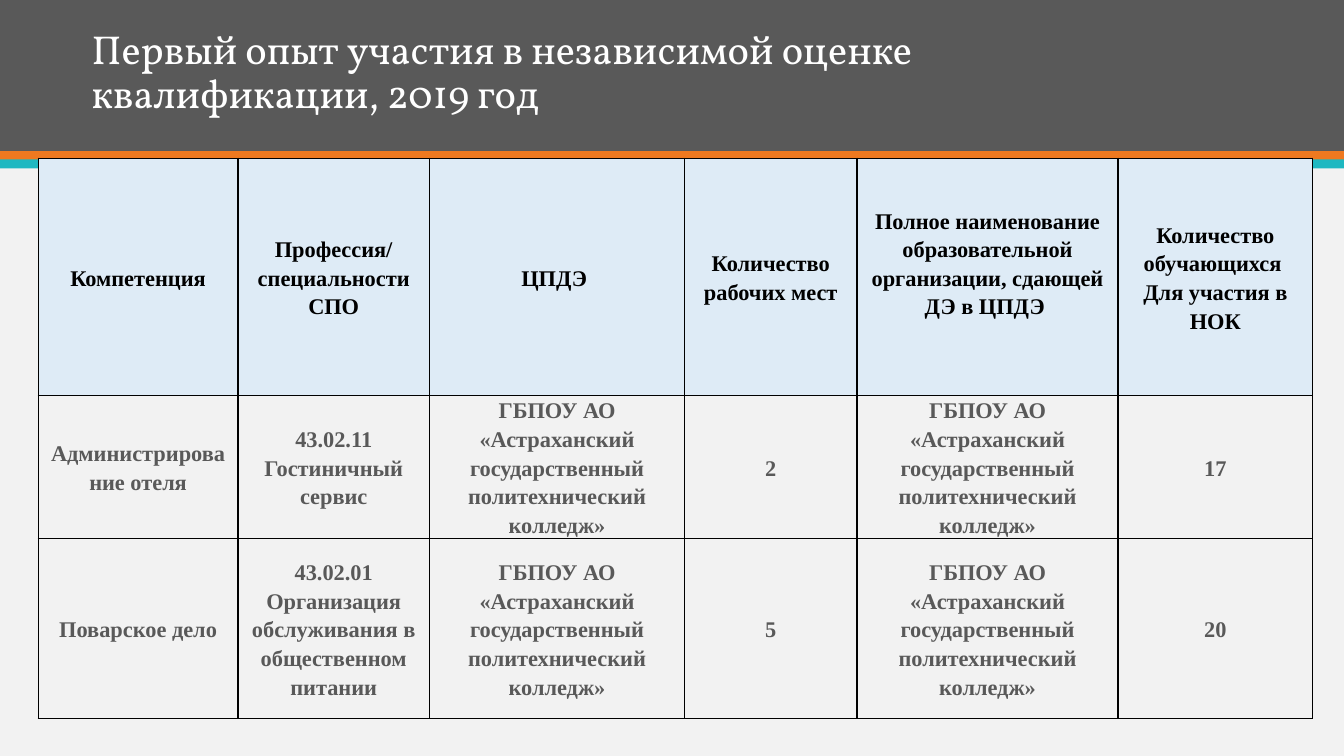
from lxml import etree
from pptx import Presentation
from pptx.dml.color import RGBColor
from pptx.enum.shapes import MSO_SHAPE
from pptx.enum.text import MSO_ANCHOR, MSO_AUTO_SIZE, PP_ALIGN
from pptx.oxml.ns import qn
from pptx.util import Inches, Pt

RECTANGLE = MSO_SHAPE.RECTANGLE
MIDDLE, BOTTOM = MSO_ANCHOR.MIDDLE, MSO_ANCHOR.BOTTOM
LEFT, CENTER = PP_ALIGN.LEFT, PP_ALIGN.CENTER
NO_AUTOFIT = MSO_AUTO_SIZE.NONE

COLORS = {"page": "F2F2F2", "banner": "595959", "orange": "EF7920",
          "teal": "1EB8C1", "header": "DEEBF6", "body": "595959",
          "black": "000000", "white": "FFFFFF"}
TITLE = "Первый опыт участия в независимой оценке квалификации, 2019 год"
COLLEGE = "ГБПОУ АО «Астраханский государственный политехнический колледж»"
# A line break inside a cell starts a new paragraph
ROWS = [
    ["Компетенция", "Профессия/ специальности СПО", "ЦПДЭ ",
     "Количество рабочих мест",
     "Полное наименование образовательной организации, сдающей ДЭ в ЦПДЭ ",
     "Количество обучающихся \nДля участия в НОК"],
    ["Администрирование отеля", "43.02.11 Гостиничный сервис", COLLEGE,
     "2", COLLEGE, "17"],
    ["Поварское дело",
     "43.02.01 Организация обслуживания в общественном питании", COLLEGE,
     "5", COLLEGE, "20"],
]
BANDS = [("banner", 0, 1.5), ("orange", 1.5, 0.09), ("teal", 1.58, 0.09)]
COLUMN_WIDTHS = [1.98, 1.9, 2.53, 1.71, 2.59, 1.93]
ROW_HEIGHTS = [2.35, 1.42, 1.79]
TABLE_LEFT, TABLE_TOP = 0.38, 1.57
ORGANISATION_COLUMN = 4
ORGANISATION_LIFT = 0.28  # raises the long heading by half a line


def rgb(name):
    return RGBColor.from_string(COLORS[name])


def add_text(paragraph, text, font, size, color, align, spacing):
    paragraph.alignment = align
    paragraph.line_spacing = spacing
    run = paragraph.add_run()
    run.text = text
    run.font.name = font
    run.font.size = Pt(size)
    run.font.color.rgb = rgb(color)
    return run


def add_borders(cell):
    """Draw the four cell edges; they must come before the fill."""
    properties = cell._tc.get_or_add_tcPr()
    for position, edge in enumerate(("lnL", "lnR", "lnT", "lnB")):
        line = etree.Element(qn(f"a:{edge}"), w=str(Pt(1)))
        fill = etree.SubElement(line, qn("a:solidFill"))
        etree.SubElement(fill, qn("a:srgbClr"), val=COLORS["black"])
        properties.insert(position, line)


def fill_cell(cell, text, is_header):
    cell.vertical_anchor = MIDDLE
    cell.margin_left = cell.margin_right = Inches(0.07)
    cell.margin_top = cell.margin_bottom = 0
    if is_header:
        cell.fill.solid()
        cell.fill.fore_color.rgb = rgb("header")
    else:
        cell.fill.background()
    add_borders(cell)
    frame = cell.text_frame
    for index, line in enumerate(text.split("\n")):
        paragraph = frame.add_paragraph() if index else frame.paragraphs[0]
        run = add_text(paragraph, line, "Times New Roman", 16,
                       "black" if is_header else "body", CENTER, 1.15)
        run.font.bold = True


def add_bands(slide, width):
    for color, top, height in BANDS:
        band = slide.shapes.add_shape(RECTANGLE, 0, Inches(top), width,
                                      Inches(height))
        band.shadow.inherit = False
        band.fill.solid()
        band.fill.fore_color.rgb = rgb(color)
        band.line.fill.background()


def place_title(slide):
    title = slide.shapes.title
    title.left, title.top = Inches(0.81), Inches(0.52)
    title.width, title.height = Inches(10.5), Inches(1.13)
    frame = title.text_frame
    frame.word_wrap = True
    frame.auto_size = NO_AUTOFIT
    frame.vertical_anchor = BOTTOM
    frame.margin_bottom = Inches(0.49)
    add_text(frame.paragraphs[0], TITLE, "Vollkorn", 28.8, "white", LEFT, 0.9)
    slide.shapes._spTree.append(title._element)  # in front of the bands


def add_assessment_table(slide):
    table = slide.shapes.add_table(
        len(ROWS), len(COLUMN_WIDTHS), Inches(TABLE_LEFT), Inches(TABLE_TOP),
        Inches(sum(COLUMN_WIDTHS)), Inches(sum(ROW_HEIGHTS))).table
    table.first_row = table.horz_banding = False
    for column, width in zip(table.columns, COLUMN_WIDTHS):
        column.width = Inches(width)
    for row, height in zip(table.rows, ROW_HEIGHTS):
        row.height = Inches(height)
    for r, texts in enumerate(ROWS):
        for c, text in enumerate(texts):
            fill_cell(table.cell(r, c), text, is_header=r == 0)
    organisation = table.cell(0, ORGANISATION_COLUMN)
    organisation.margin_bottom = Inches(ORGANISATION_LIFT)


def main():
    deck = Presentation()
    deck.slide_width, deck.slide_height = Inches(13.33), Inches(7.5)
    slide = deck.slides.add_slide(deck.slide_layouts[5])
    slide.background.fill.solid()
    slide.background.fill.fore_color.rgb = rgb("page")
    add_bands(slide, deck.slide_width)
    place_title(slide)
    add_assessment_table(slide)
    deck.save("out.pptx")


if __name__ == "__main__":
    main()
